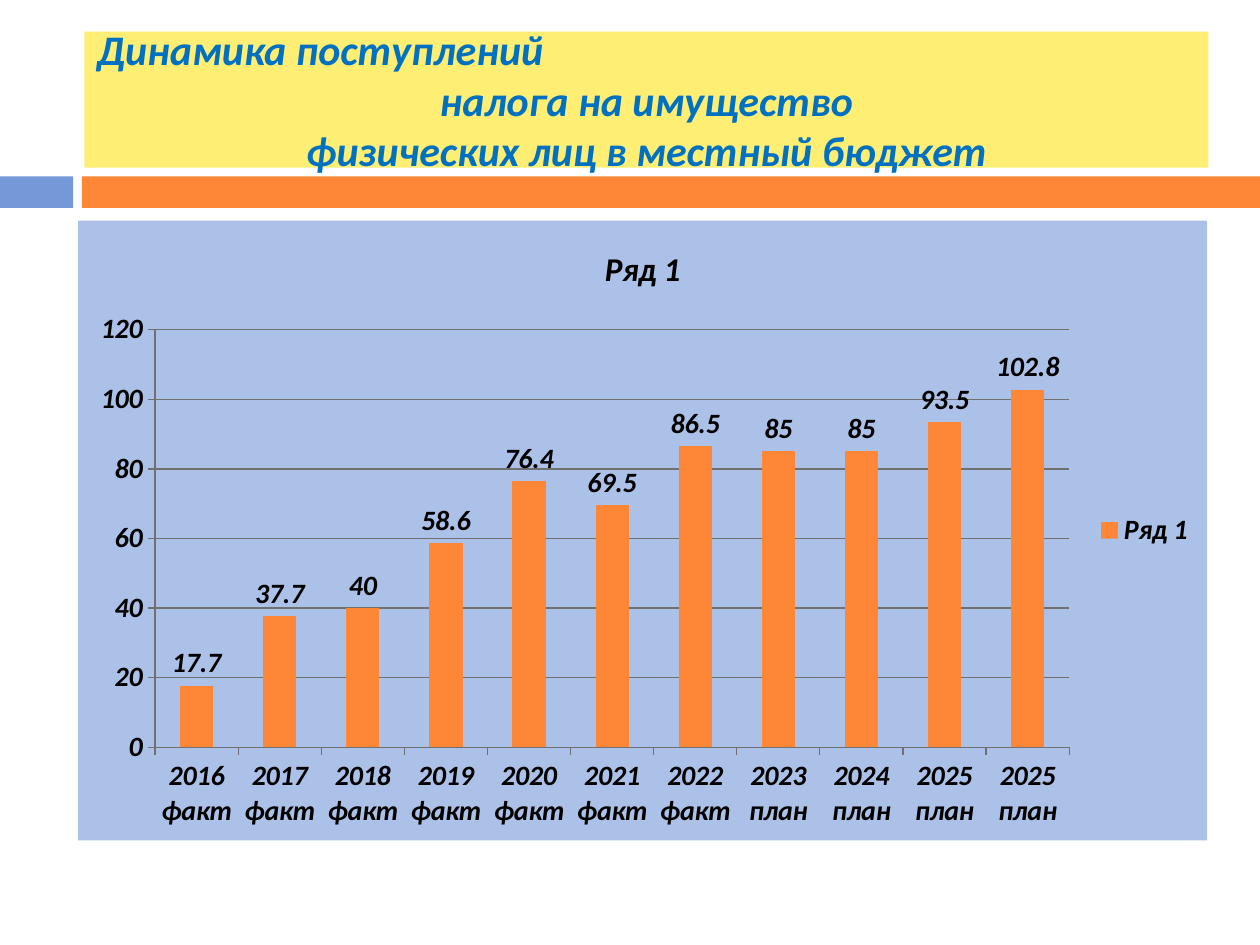
"""Build a slide charting the growth of personal property tax receipts."""
from lxml.etree import SubElement
from pptx import Presentation
from pptx.chart.data import CategoryChartData
from pptx.dml.color import RGBColor
from pptx.enum.chart import XL_CHART_TYPE as ChartType
from pptx.enum.chart import XL_LABEL_POSITION as LabelPos
from pptx.enum.chart import XL_LEGEND_POSITION as LegendPos
from pptx.enum.chart import XL_TICK_MARK as Tick
from pptx.enum.shapes import MSO_SHAPE as Shape
from pptx.enum.text import MSO_ANCHOR as Anchor
from pptx.enum.text import PP_ALIGN as Align
from pptx.oxml import parse_xml
from pptx.oxml.ns import nsdecls, qn
from pptx.util import Inches, Pt

ORANGE = RGBColor(0xFE, 0x86, 0x37)
BLUE = RGBColor(0x75, 0x98, 0xD9)
YELLOW = RGBColor(0xFF, 0xEE, 0x74)
PALE_BLUE = RGBColor(0xAC, 0xC1, 0xE8)
TITLE_BLUE = RGBColor(0x00, 0x70, 0xC0)
BLACK = RGBColor(0, 0, 0)
GRAY = RGBColor(0x70, 0x70, 0x70)

WIDTH, HEIGHT = 10, 7.5
BAND_TOP, BAND_HEIGHT, BAND_SPLIT = 1.4, 0.25, 0.65
TITLE_BOX = (0.67, 0.25, 8.92, 1.08)
CHART_BOX = (0.62, 1.75, 8.96, 4.92)

TITLE = [
    ("Динамика поступлений", Align.LEFT),
    ("налога на имущество", Align.CENTER),
    ("физических лиц в местный бюджет", Align.CENTER),
]
SERIES = "Ряд 1"
RECEIPTS = [
    ("2016 факт", 17.7), ("2017 факт", 37.7), ("2018 факт", 40),
    ("2019 факт", 58.6), ("2020 факт", 76.4), ("2021 факт", 69.5),
    ("2022 факт", 86.5), ("2023 план", 85), ("2024 план", 85),
    ("2025 план", 93.5), ("2025 план", 102.8),
]
TEXT_STYLE = {"name": "Calibri", "bold": True, "italic": True}


def style_font(font, size, color):
    for attribute, value in {**TEXT_STYLE, "size": Pt(size)}.items():
        setattr(font, attribute, value)
    font.color.rgb = color


def add_block(slide, box, color):
    block = slide.shapes.add_shape(Shape.RECTANGLE, *map(Inches, box))
    block.shadow.inherit = False
    block.fill.solid()
    block.fill.fore_color.rgb = color
    block.line.fill.background()
    return block


def add_title(slide):
    frame = add_block(slide, TITLE_BOX, YELLOW).text_frame
    frame.word_wrap = True
    frame.vertical_anchor = Anchor.MIDDLE
    for index, (words, alignment) in enumerate(TITLE):
        line = frame.paragraphs[0] if index == 0 else frame.add_paragraph()
        line.alignment = alignment
        run = line.add_run()
        run.text = words
        style_font(run.font, 24, TITLE_BLUE)


def fill_background(chart, color):
    properties = parse_xml(f"<c:spPr {nsdecls('c', 'a')}/>")
    solid = SubElement(properties, qn("a:solidFill"))
    SubElement(solid, qn("a:srgbClr"), val=str(color))
    SubElement(SubElement(properties, qn("a:ln")), qn("a:noFill"))
    chart.element.find(qn("c:chart")).addnext(properties)


def add_receipts_chart(slide):
    years, amounts = zip(*RECEIPTS)
    receipts = CategoryChartData()
    receipts.categories = years
    receipts.add_series(SERIES, amounts)
    chart = slide.shapes.add_chart(
        ChartType.COLUMN_CLUSTERED, *map(Inches, CHART_BOX), receipts).chart
    style_font(chart.font, 16, BLACK)
    fill_background(chart, PALE_BLUE)

    chart.has_title = True
    heading = chart.chart_title.text_frame.paragraphs[0].add_run()
    heading.text = SERIES
    style_font(heading.font, 19, BLACK)

    chart.has_legend = True
    chart.legend.position = LegendPos.RIGHT
    chart.legend.include_in_layout = False

    amount_axis = chart.value_axis
    for attribute, value in {"minimum_scale": 0, "maximum_scale": 120,
                             "major_unit": 20}.items():
        setattr(amount_axis, attribute, value)
    for axis in (chart.category_axis, amount_axis):
        axis.major_tick_mark = Tick.OUTSIDE
        axis.format.line.color.rgb = GRAY
    amount_axis.major_gridlines.format.line.color.rgb = GRAY

    plot = chart.plots[0]
    plot.gap_width = 150
    plot.vary_by_categories = False
    bars = plot.series[0]
    bars.format.fill.solid()
    bars.format.fill.fore_color.rgb = ORANGE
    labels = bars.data_labels
    labels.show_value = True
    labels.position = LabelPos.OUTSIDE_END
    style_font(labels.font, 16, BLACK)


def main():
    deck = Presentation()
    deck.slide_width, deck.slide_height = Inches(WIDTH), Inches(HEIGHT)
    slide = deck.slides.add_slide(deck.slide_layouts[6])
    for left, right, color in ((0, 0.58, BLUE), (BAND_SPLIT, WIDTH, ORANGE)):
        add_block(slide, (left, BAND_TOP, right - left, BAND_HEIGHT), color)
    add_title(slide)
    add_receipts_chart(slide)
    deck.save("out.pptx")


if __name__ == "__main__":
    main()
